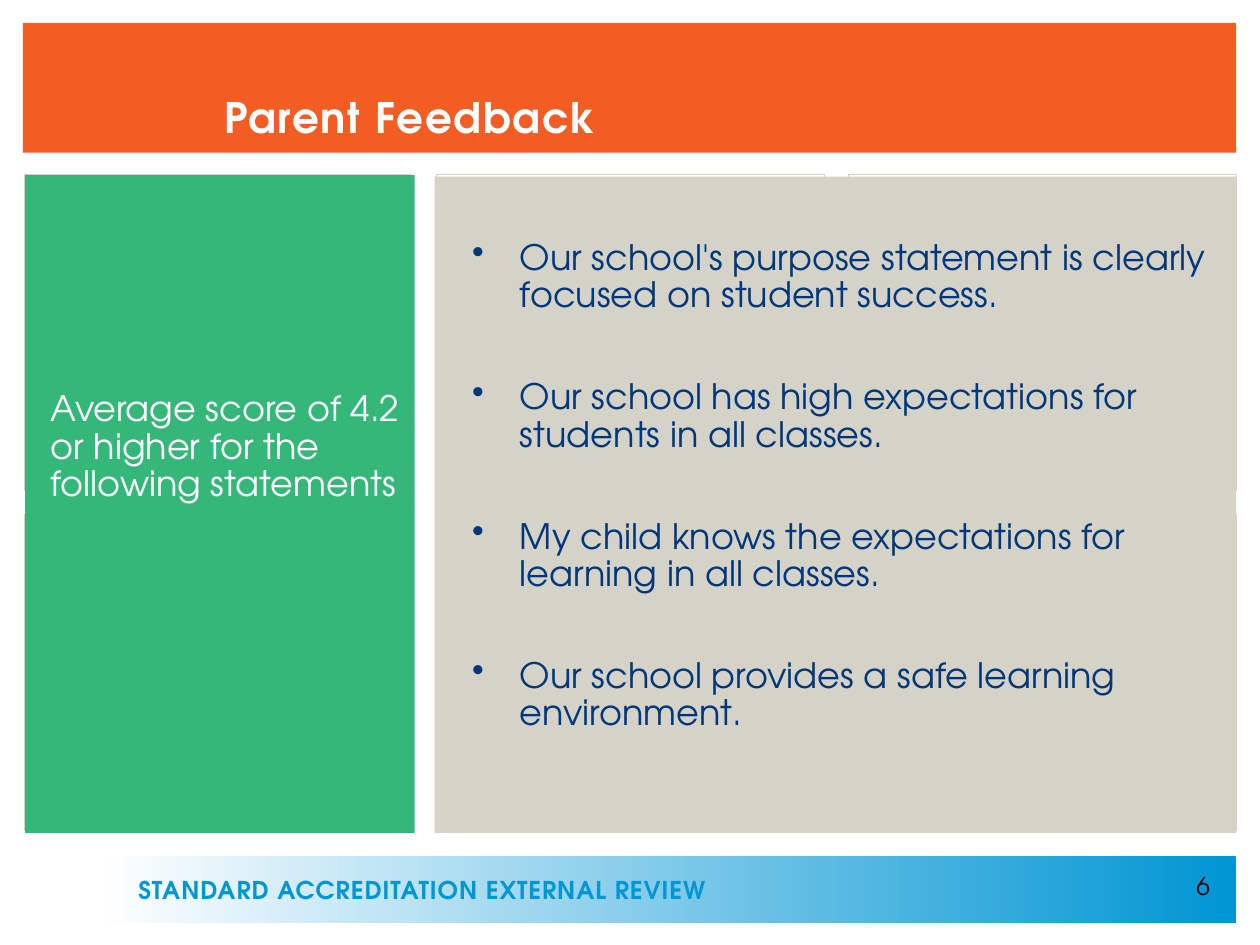
from itertools import product

from lxml import etree
from pptx import Presentation
from pptx import util as u
from pptx.dml.color import RGBColor
from pptx.enum import shapes, text
from pptx.oxml import ns

FONT = "TeX Gyre Adventor"
WHITE = RGBColor(0xFF, 0xFF, 0xFF)
BLACK = RGBColor(0x00, 0x00, 0x00)
ORANGE = RGBColor(0xF1, 0x5D, 0x22)
GREEN = RGBColor(0x36, 0xB7, 0x7A)
STONE = RGBColor(0xD5, 0xD2, 0xC8)
NAVY = RGBColor(0x00, 0x37, 0x7B)
BLUE = RGBColor(0x00, 0x95, 0xD3)

STATEMENTS = [
    "Our school's purpose statement is clearly focused on student success.",
    "Our school has high expectations for students in all classes.",
    "My child knows the expectations for learning in all classes.",
    "Our school provides a safe learning environment.",
]


def set_all(obj, values):
    """Set each named attribute of an object."""
    for name, value in values.items():
        setattr(obj, name, value)


def add_rect(s, box, fill=None, line=None):
    """Add a flat rectangle; box is left, top, width, height in cm."""
    sp = s.shapes.add_shape(shapes.MSO_SHAPE.RECTANGLE, *map(u.Cm, box))
    sp.shadow.inherit = False
    if fill is None:
        sp.fill.background()
    else:
        sp.fill.solid()
        sp.fill.fore_color.rgb = fill
    if line is None:
        sp.line.fill.background()
    else:
        sp.line.color.rgb = line
        sp.line.width = u.Pt(0.25)
    return sp


def add_text(s, box):
    """Add a text box; box is left, top, width, height in cm."""
    return s.shapes.add_textbox(*map(u.Cm, box))


def write(sp, lines, font, insets, anchor=text.MSO_ANCHOR.TOP, para=None,
          gap=0, spacing=0, bullet=False):
    """Fill a shape with paragraphs of one format."""
    tf = sp.text_frame
    margins = ("margin_left", "margin_top", "margin_right", "margin_bottom")
    set_all(tf, dict(zip(margins, map(u.Cm, insets)),
                     word_wrap=True, vertical_anchor=anchor))
    for i, line in enumerate(lines):
        p = tf.add_paragraph() if i else tf.paragraphs[0]
        set_all(p, {"alignment": text.PP_ALIGN.LEFT, **(para or {})})
        if i:
            p.space_before = u.Pt(gap)
        if bullet:
            add_bullet(p)
        r = p.add_run()
        r.text = line
        color = font["color"]
        set_all(r.font, {"name": FONT, "size": u.Pt(font["size"]),
                         "bold": font.get("bold", False)})
        r.font.color.rgb = color
        if spacing:
            r._r.get_or_add_rPr().set("spc", str(spacing))


def add_bullet(p):
    """Give a paragraph a hanging bullet."""
    pPr = p._p.get_or_add_pPr()
    indent = u.Cm(0.96)
    pPr.set("marL", str(indent))
    pPr.set("indent", str(-indent))
    etree.SubElement(pPr, ns.qn("a:buChar")).set("char", "•")


def add_header(s, box, title):
    """Add the orange title band."""
    left, top, width, height = box
    add_rect(s, box, ORANGE)
    sp = add_text(s, (left + 4.06, top, width - 4.06, height + 0.03))
    write(sp, [title], {"size": 24, "color": WHITE, "bold": True},
          (0, 0, 0, 0.25), text.MSO_ANCHOR.BOTTOM, spacing=100)


def add_tiles(s, box, cols=3, rows=2, gap=0.49):
    """Add the grid of outlined tiles."""
    left, top, width, height = box
    w = (width - gap * (cols - 1)) / cols
    h = (height - gap * (rows - 1)) / rows
    for row, col in product(range(rows), range(cols)):
        add_rect(s, (left + col * (w + gap), top + row * (h + gap), w, h),
                 line=STONE)


def add_panel(s, box, fill, lines, color, insets, **kwargs):
    """Add a filled panel of body text."""
    write(add_rect(s, box, fill), lines, {"size": 20, "color": color}, insets,
          para={"line_spacing": u.Pt(21.2)}, **kwargs)


def add_footer(s, box, label, number):
    """Add the gradient band with its label and slide number."""
    left, top, width, height = box
    sp = add_rect(s, box, WHITE)
    sp.fill.gradient()
    sp.fill.gradient_angle = 0
    for stop, position, color in zip(sp.fill.gradient_stops, (0, 1), (WHITE, BLUE)):
        stop.position = position
        stop.color.rgb = color
    write(add_text(s, (left + width - 6.2, top + 0.18, 5.92, 1.02)), [number],
          {"size": 14, "color": BLACK}, (0.25, 0.13, 0.25, 0.13),
          para={"alignment": text.PP_ALIGN.RIGHT})
    write(add_text(s, (left + 0.81, top + 0.1, 12.12, 1.19)), [label],
          {"size": 14, "color": BLUE, "bold": True}, (0, 0, 0, 0),
          text.MSO_ANCHOR.MIDDLE, spacing=50)


def main():
    """Build and save the slide."""
    prs = Presentation()
    set_all(prs, {"slide_width": u.Cm(25.4), "slide_height": u.Cm(19.05)})
    s = prs.slides.add_slide(prs.slide_layouts[6])
    add_footer(s, (1.98, 17.25, 22.94, 1.35),
               "STANDARD ACCREDITATION EXTERNAL REVIEW", "6")
    add_header(s, (0.46, 0.46, 24.46, 2.62), "Parent Feedback")
    add_tiles(s, (0.48, 3.51, 24.44, 13.23))
    add_panel(s, (8.76, 3.56, 16.16, 13.23), STONE, STATEMENTS, NAVY,
              (0.76, 1.29, 0.25, 0.13), gap=37.2, bullet=True)
    add_panel(s, (0.51, 3.53, 7.85, 13.26), GREEN,
              ["Average score of 4.2 or higher for the following statements"],
              WHITE, (0.51, 4.37, 0.25, 0.13))
    prs.save("out.pptx")


if __name__ == "__main__":
    main()
